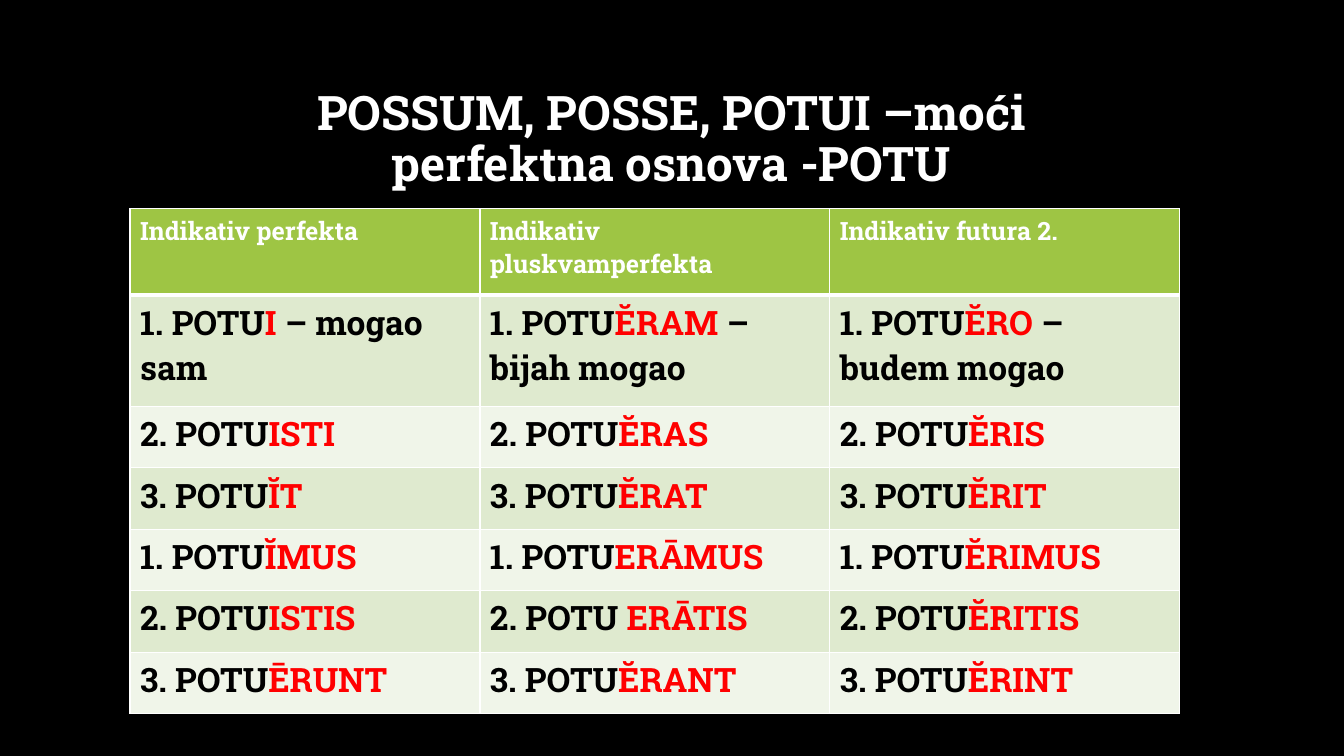
from lxml.etree import SubElement
from pptx import Presentation
from pptx.dml.color import RGBColor
from pptx.enum.text import MSO_ANCHOR as Anchor, PP_ALIGN as Align
from pptx.oxml.ns import qn
from pptx.util import Inches, Pt

WHITE, BLACK, RED, GREEN = "FFFFFF", "000000", "FF0000", "9EC544"
BANDS = ["DFEACF", "F0F5E9"]
HEADINGS = ["Indikativ perfekta", "Indikativ pluskvamperfekta", "Indikativ futura 2."]
CONJUGATION = [
    ["1. POTU|I |– mogao sam", "1. POTU|ĔRAM |– bijah mogao", "1. POTU|ĔRO |– budem mogao"],
    ["2. POTU|ISTI", "2. POTU|ĔRAS", "2. POTU|ĔRIS"],
    ["3. POTU|ĬT", "3. POTU|ĔRAT", "3. POTU|ĔRIT"],
    ["1. POTU|ĬMUS", "1. POTU|ERĀMUS", "1. POTU|ĔRIMUS"],
    ["2. POTU|ISTIS", "2. POTU |ERĀTIS", "2. POTU|ĔRITIS"],
    ["3. POTU|ĒRUNT", "3. POTU|ĔRANT", "3. POTU|ĔRINT"],
]
ROW_HEIGHTS = [0.86, 1.1] + [0.61] * 5


def paint(fill, color):
    fill.solid()
    fill.fore_color.rgb = RGBColor.from_string(color)


def write(para, text, size=24, color=BLACK, font="Roboto Slab", bold=True):
    span = para.add_run()
    span.text = text
    span.font.size, span.font.name, span.font.bold = Pt(size), font, bold
    paint(span.font.fill, color)


def add_borders(cell, **widths):
    properties = cell._tc.get_or_add_tcPr()
    for side in "LRTB":
        width = Pt(widths.get(side, 1))
        line = SubElement(properties, qn(f"a:ln{side}"), w=str(width))
        solid = SubElement(line, qn("a:solidFill"))
        SubElement(solid, qn("a:srgbClr"), val=WHITE)


class ConjugationPage:
    """Holds the current slide and adds its styled elements."""

    def __init__(self, deck):
        self.page = deck.slides.add_slide(deck.slide_layouts[5])
        paint(self.page.background.fill, BLACK)

    def title(self, lines, left, top, width, height):
        box = self.page.shapes.title
        box.left, box.top = Inches(left), Inches(top)
        box.width, box.height = Inches(width), Inches(height)
        box.text_frame.vertical_anchor = Anchor.MIDDLE
        box.text_frame.word_wrap = True
        para = box.text_frame.paragraphs[0]
        para.alignment, para.line_spacing = Align.CENTER, 0.9
        for index, line in enumerate(lines):
            if index:
                para.add_line_break()
            write(para, line, size=34, color=WHITE)

    def table(self, headings, rows, left, top, width, heights):
        frame = self.page.shapes.add_table(
            len(heights), len(headings), Inches(left), Inches(top),
            Inches(width), Inches(sum(heights)))
        grid = frame.table
        for row, height in zip(grid.rows, heights):
            row.height = Inches(height)
        for column, heading in enumerate(headings):
            cell = grid.cell(0, column)
            add_borders(cell, B=3)
            paint(cell.fill, GREEN)
            write(cell.text_frame.paragraphs[0], heading, size=18, color=WHITE)
        for number, forms in enumerate(rows, 1):
            for column, form in enumerate(forms):
                cell = grid.cell(number, column)
                add_borders(cell, T=3 if number == 1 else 1)
                paint(cell.fill, BANDS[(number - 1) % 2])
                for text, color in zip(form.split("|"), [BLACK, RED, BLACK]):
                    write(cell.text_frame.paragraphs[0], text, color=color)


def main():
    deck = Presentation()
    deck.slide_width, deck.slide_height = Inches(13.33), Inches(7.5)
    page = ConjugationPage(deck)
    page.title(["POSSUM, POSSE, POTUI –moći", "perfektna osnova -POTU"],
               1, 0.67, 11.32, 1.45)
    page.table(HEADINGS, CONJUGATION, 1.29, 2.07, 10.41, ROW_HEIGHTS)
    deck.save("out.pptx")


if __name__ == "__main__":
    main()
